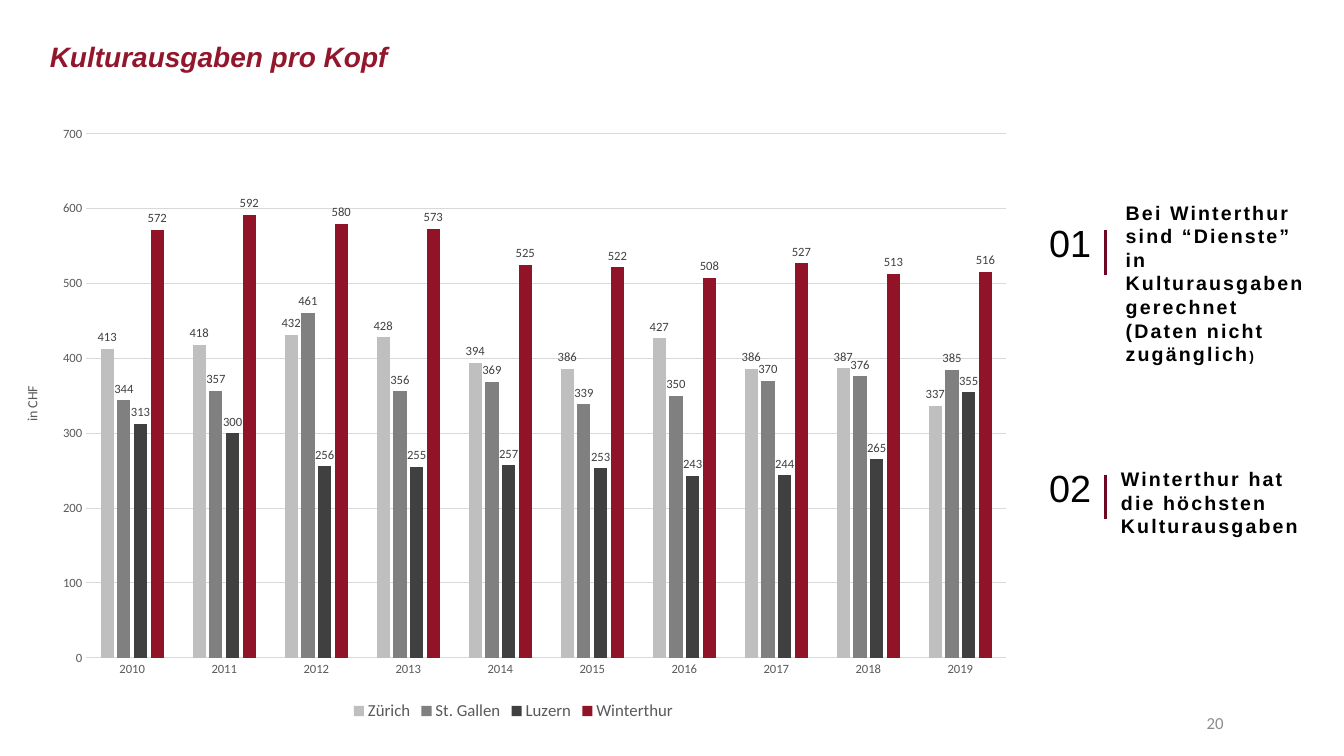
import pptx
import pptx.chart.data
import pptx.dml.color
import pptx.enum.chart
import pptx.enum.shapes
import pptx.enum.text
import pptx.oxml
import pptx.oxml.ns
import pptx.util
from dataclasses import dataclass

Cm, Pt = pptx.util.Cm, pptx.util.Pt
CHART, TEXT = pptx.enum.chart, pptx.enum.text


@dataclass(frozen=True)
class Theme:
    head: str = "Arial"
    body: str = "Calibri"
    black: str = "000000"
    red: str = "92172C"
    rule: str = "6F0722"
    page: str = "8C8C8C"
    axis: str = "595959"
    grid: str = "D9D9D9"
    label: str = "404040"
    bars: tuple = ("BFBFBF", "808080", "404040", "901327")
    tiny: float = 9
    small: float = 10
    mid: float = 12
    note: float = 14
    title: float = 20
    big: float = 27


def rgb(code):
    return pptx.dml.color.RGBColor.from_string(code)


def style(font, name, size, color, bold=False, italic=False):
    font.name, font.size = name, Pt(size)
    font.bold, font.italic = bold, italic
    font.color.rgb = rgb(color)


def write(para, text, align=TEXT.PP_ALIGN.LEFT, line=None, track=None, **look):
    """Add one formatted run to a paragraph."""
    para.alignment = align
    if line:
        para.line_spacing = line
    run = para.add_run()
    run.text = text
    style(run.font, **look)
    if track:
        run.font._element.set("spc", str(int(track * 100)))


def place(parent, index, inner=False, **spots):
    """Give a chart part a manual layout in fractions of the chart."""
    for old in parent.findall(pptx.oxml.ns.qn("c:layout")):
        parent.remove(old)
    target = '<c:layoutTarget val="inner"/>' if inner else ""
    modes = "".join(f'<c:{k}Mode val="edge"/>' for k in "xy")
    sizes = "".join(f'<c:{k} val="{v}"/>' for k, v in spots.items())
    parent.insert(index, pptx.oxml.parse_xml(
        f'<c:layout {pptx.oxml.ns.nsdecls("c")}><c:manualLayout>'
        f"{target}{modes}{sizes}</c:manualLayout></c:layout>"))


class Board:
    def __init__(self, deck, theme):
        self.theme = theme
        self.slide = deck.slides.add_slide(deck.slide_layouts[5])

    def title(self, text, box):
        t, shape = self.theme, self.slide.shapes.title
        shape.left, shape.top, shape.width, shape.height = map(Cm, box)
        frame = shape.text_frame
        frame.vertical_anchor = TEXT.MSO_ANCHOR.BOTTOM
        write(frame.paragraphs[0], text, line=0.9, name=t.head, size=t.title,
              color=t.red, bold=True, italic=True)

    def text(self, box, inset=0, anchor=TEXT.MSO_ANCHOR.TOP):
        frame = self.slide.shapes.add_textbox(*map(Cm, box)).text_frame
        frame.word_wrap, frame.vertical_anchor = True, anchor
        frame.margin_left = frame.margin_right = Cm(inset)
        frame.margin_top = frame.margin_bottom = Cm(inset / 2)
        return frame

    def rule(self, x, top, end):
        line = self.slide.shapes.add_connector(
            pptx.enum.shapes.MSO_CONNECTOR.STRAIGHT, Cm(x), Cm(top), Cm(x), Cm(end))
        line.line.color.rgb, line.line.width = rgb(self.theme.rule), Pt(2)
        line._element.spPr.append(pptx.oxml.parse_xml(
            f'<a:effectLst {pptx.oxml.ns.nsdecls("a")}/>'))

    def note(self, mark, top, box, paras):
        """Number, rule and remark; each paragraph is a list of (text, size)."""
        t = self.theme
        frame = self.text(box)
        for i, parts in enumerate(paras):
            para = frame.add_paragraph() if i else frame.paragraphs[0]
            for text, size in parts:
                write(para, text, track=1.5, name=t.head, size=size,
                      color=t.black, bold=True)
        write(self.text((26.44, top, 1.63, 0.94)).paragraphs[0], mark,
              line=0.8, name=t.head, size=t.big, color=t.black)
        self.rule(27.86, top + 0.04, top + 1.17)

    def page(self, text, box):
        t = self.theme
        frame = self.text(box, 0.25, TEXT.MSO_ANCHOR.MIDDLE)
        write(frame.paragraphs[0], text, align=TEXT.PP_ALIGN.RIGHT,
              name=t.body, size=t.mid, color=t.page)

    def chart(self, box, cats, rows, unit):
        t = self.theme
        data = pptx.chart.data.CategoryChartData(number_format="0")
        data.categories = cats
        for name, vals in rows.items():
            data.add_series(name, vals)
        chart = self.slide.shapes.add_chart(
            CHART.XL_CHART_TYPE.COLUMN_CLUSTERED, *map(Cm, box), data).chart
        chart.has_title = False
        style(chart.font, t.body, t.small, t.black)

        # Legend
        chart.has_legend = True
        chart.legend.position = CHART.XL_LEGEND_POSITION.BOTTOM
        chart.legend.include_in_layout = False
        style(chart.legend.font, t.body, t.mid, t.axis)

        # Columns and value labels
        plot = chart.plots[0]
        plot.gap_width, plot.overlap, plot.vary_by_categories = 219, -27, False
        for row, color in zip(plot.series, t.bars):
            row.format.fill.solid()
            row.format.fill.fore_color.rgb = rgb(color)
            row.invert_if_negative = False
            labels = row.data_labels
            labels.show_value = True
            labels.position = CHART.XL_LABEL_POSITION.OUTSIDE_END
            style(labels.font, t.body, t.tiny, t.label)

        # Axes
        cat, val = chart.category_axis, chart.value_axis
        for axis in (cat, val):
            axis.major_tick_mark = axis.minor_tick_mark = CHART.XL_TICK_MARK.NONE
            style(axis.tick_labels.font, t.body, t.tiny, t.axis)
        val.minimum_scale, val.maximum_scale, val.major_unit = 0, 700, 100
        val.has_major_gridlines = True
        val.format.line.fill.background()
        for line in (cat.format.line, val.major_gridlines.format.line):
            line.color.rgb, line.width = rgb(t.grid), Pt(0.75)
        write(val.axis_title.text_frame.paragraphs[0], unit,
              align=TEXT.PP_ALIGN.CENTER, name=t.body, size=t.small, color=t.axis)
        place(val.axis_title._element, 1, x=0.02, y=0.44)
        place(plot._element.getparent(), 0, inner=True,
              x=0.084, y=0.031, w=0.896, h=0.859)


def main():
    deck = pptx.Presentation()
    deck.slide_width, deck.slide_height = Cm(33.87), Cm(19.05)
    theme = Theme()
    board = Board(deck, theme)

    # Heading and page number
    board.page("20", (23.47, 17.7, 7.62, 1.02))
    board.title("Kulturausgaben pro Kopf", (1, 0.15, 27.6, 1.83))

    # Spending per head
    board.chart((0, 2.9, 25.88, 15.37), [str(y) for y in range(2010, 2020)], {
        "Zürich": (413, 418, 432, 428, 394, 386, 427, 386, 387, 337),
        "St. Gallen": (344, 357, 461, 356, 369, 339, 350, 370, 376, 385),
        "Luzern": (313, 300, 256, 255, 257, 253, 243, 244, 265, 355),
        "Winterthur": (572, 592, 580, 573, 525, 522, 508, 527, 513, 516),
    }, "in CHF")

    # Remarks
    board.note("01", 5.76, (28.37, 5.06, 4.55, 4.19), [[
        ("Bei Winterthur sind “Dienste” in Kulturausgaben gerechnet "
         "(Daten nicht zugänglich", theme.note), (")", theme.small)]])
    board.note("02", 11.92, (28.25, 11.77, 4.93, 1.8), [
        [("Winterthur hat die höchsten", theme.note)],
        [("Kulturausgaben", theme.note)]])

    deck.save("out.pptx")


if __name__ == "__main__":
    main()
